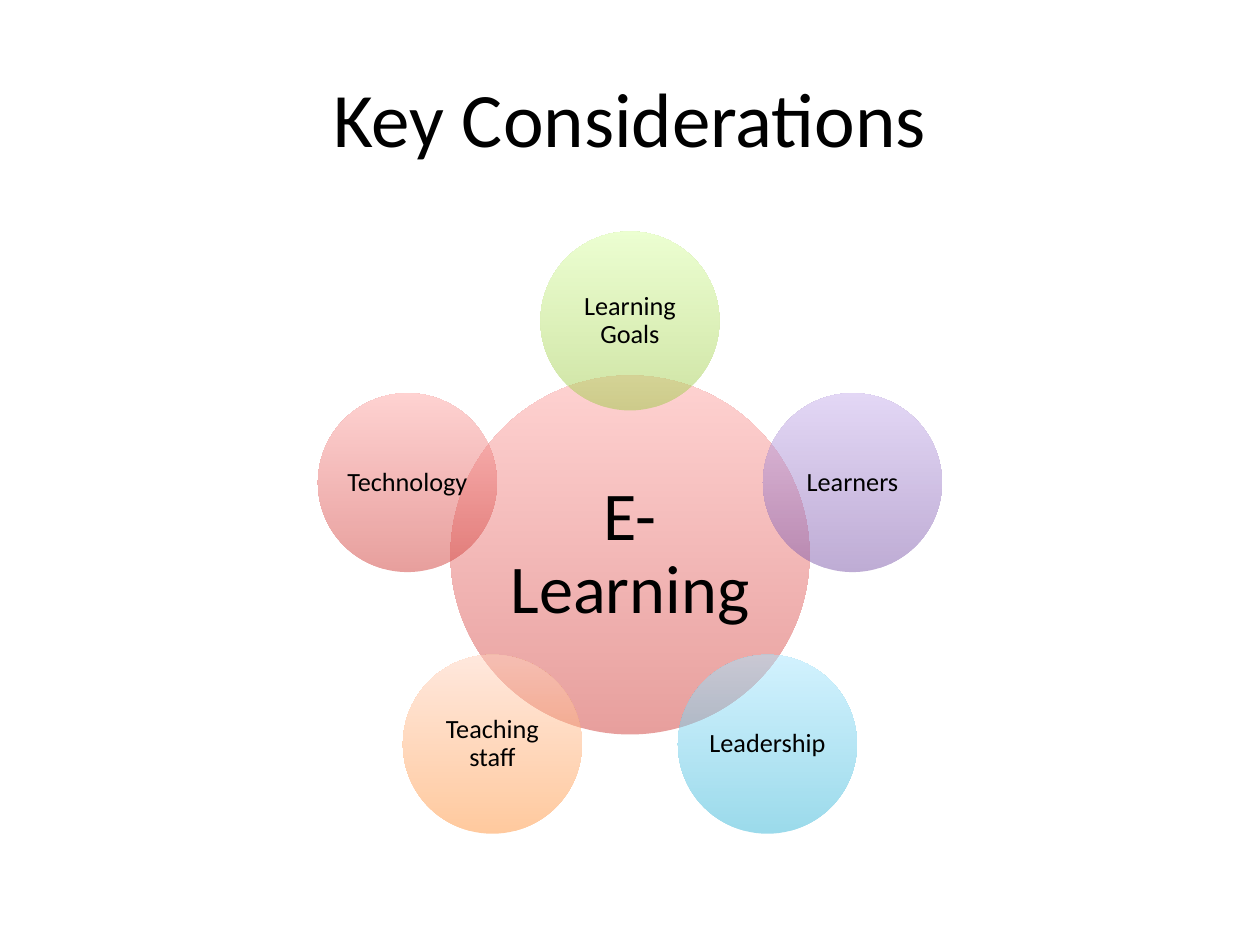
import math

from pptx import Presentation
from pptx.dml.color import RGBColor
from pptx.enum.shapes import MSO_SHAPE
from pptx.enum.text import MSO_ANCHOR, PP_ALIGN
from pptx.oxml.ns import qn
from pptx.util import Emu, Pt

ELLIPSE = MSO_SHAPE.OVAL
MIDDLE = MSO_ANCHOR.MIDDLE
CENTER = PP_ALIGN.CENTER
TITLE_ONLY = 5
EMU_PER_PX = 914400 / 126

HUB_CENTER = (630, 555)
HUB_DIAMETER = 359
SATELLITE_DIAMETER = 179
ORBIT_RADIUS = 234

RED = ("D1403C", "FFA6A5")
GREEN = ("A0CA4A", "DAFFA5")
PURPLE = ("7F5BAB", "C8B0ED")
BLUE = ("39B7D8", "A7E6FF")
ORANGE = ("FF953E", "FFD2BD")

# Clockwise from the top
SATELLITES = [
    ("Learning Goals", GREEN),
    ("Learners", PURPLE),
    ("Leadership", BLUE),
    ("Teaching staff", ORANGE),
    ("Technology", RED),
]


def px(length):
    return Emu(round(length * EMU_PER_PX))


def color(hex_text):
    return RGBColor.from_string(hex_text)


def apply(target, values):
    for name, value in values.items():
        setattr(target, name, value)


class SlideBuilder:
    font = "Calibri"
    ink = "000000"
    opacity = 50

    def __init__(self, page):
        self.page = page

    def place(self, shape, left, top, width, height):
        apply(shape, {"left": px(left), "top": px(top),
                      "width": px(width), "height": px(height)})

    def label(self, shape, text, size, inset, line_spacing):
        frame = shape.text_frame
        margins = {f"margin_{side}": px(inset)
                   for side in ("left", "top", "right", "bottom")}
        apply(frame, {"word_wrap": True, "vertical_anchor": MIDDLE, **margins})
        para = frame.paragraphs[0]
        apply(para, {"alignment": CENTER, "line_spacing": line_spacing})
        span = para.add_run()
        span.text = text
        apply(span.font, {"name": self.font, "size": Pt(size)})
        span.font.color.rgb = color(self.ink)

    def title(self, text, left, top, width, height):
        shape = self.page.shapes.title
        self.place(shape, left, top, width, height)
        self.label(shape, text, size=44, inset=6, line_spacing=1.0)

    def circle(self, text, center, diameter, shades, size, inset):
        left, top = (middle - diameter / 2 for middle in center)
        shape = self.page.shapes.add_shape(
            ELLIPSE, px(left), px(top), px(diameter), px(diameter))
        shape.shadow.inherit = False
        shape.line.fill.background()
        self.gradient(shape, shades)
        self.label(shape, text, size, inset, line_spacing=0.9)

    def gradient(self, shape, shades):
        """Fill from the dark shade at the bottom to the light one on top."""
        shape.fill.gradient()
        shape.fill.gradient_angle = 90
        for stop, position, shade in zip(shape.fill.gradient_stops, (0, 1), shades):
            stop.position = position
            stop.color.rgb = color(shade)
        for node in shape.element.spPr.iter(qn("a:srgbClr")):
            alpha = node.makeelement(qn("a:alpha"), {"val": str(self.opacity * 1000)})
            node.append(alpha)


def main():
    deck = Presentation()
    apply(deck, {"slide_width": px(1260), "slide_height": px(945)})
    page = deck.slides.add_slide(deck.slide_layouts[TITLE_ONLY])
    builder = SlideBuilder(page)

    # Title
    builder.title("Key Considerations", 63, 38, 1134, 157)

    # Central circle
    builder.circle("E-Learning", HUB_CENTER, HUB_DIAMETER, RED, size=39, inset=6)

    # Satellites at equal angles around it
    for index, (name, shades) in enumerate(SATELLITES):
        angle = math.tau * index / len(SATELLITES)
        center = (HUB_CENTER[0] + ORBIT_RADIUS * math.sin(angle),
                  HUB_CENTER[1] - ORBIT_RADIUS * math.cos(angle))
        builder.circle(name, center, SATELLITE_DIAMETER, shades, size=15, inset=2)

    deck.save("out.pptx")


if __name__ == "__main__":
    main()
